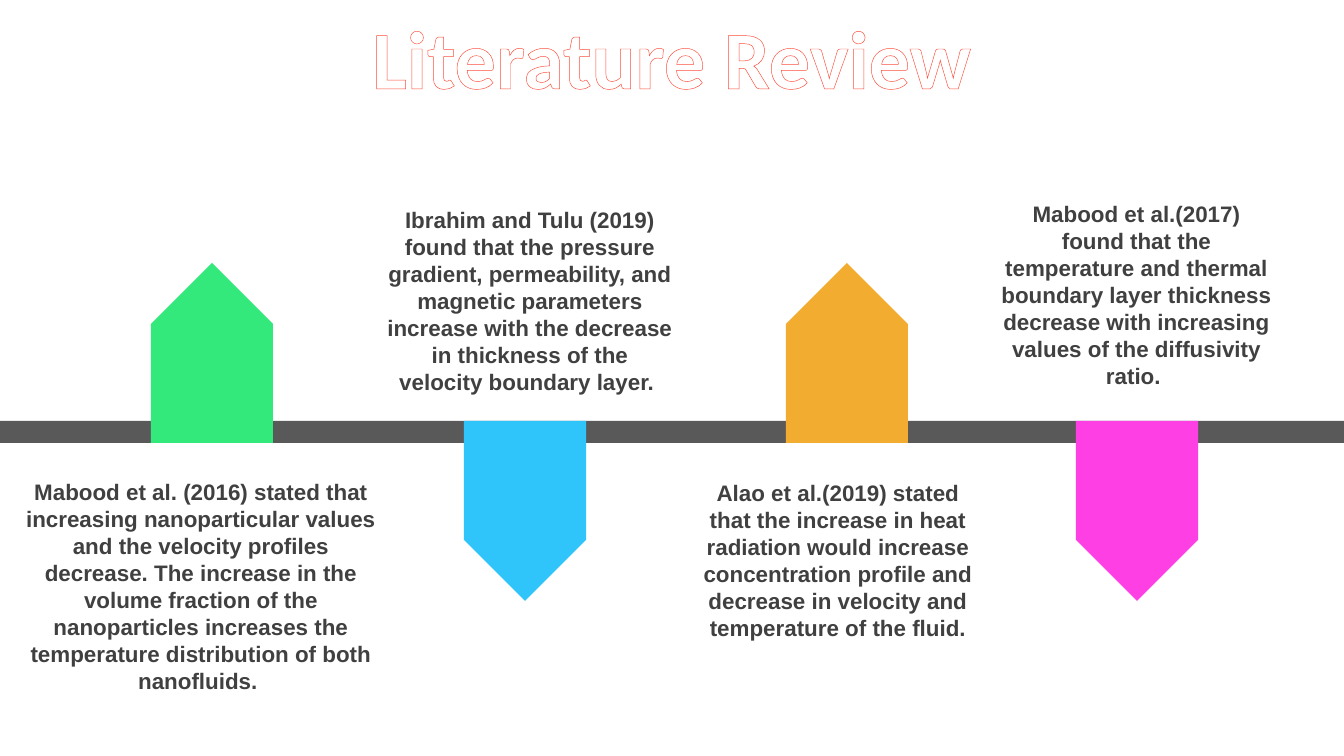
from lxml import etree
from pptx import Presentation
from pptx import util as u
from pptx.dml.color import RGBColor
from pptx.enum import dml, shapes, text
from pptx.oxml.ns import qn

SLIDE_W, SLIDE_H = 1344, 756
BAR_TOP, BAR_H = 421, 22
MARKER_W, MARKER_H = 122, 180
TITLE_LINE = "FE4D3B"

# marker left, points up, colour, text box (left, top, width, height), text
STUDIES = [
    (151, True, "33E97C", (8, 472, 386, 231),
     "Mabood et al. (2016) stated that increasing nanoparticular values and "
     "the velocity profiles decrease. The increase in the volume fraction of "
     "the nanoparticles increases the temperature distribution of both "
     "nanofluids. "),
    (464, False, "2FC5FA", (374, 200, 312, 203),
     "Ibrahim and Tulu (2019) found that the pressure gradient, permeability, "
     "and magnetic parameters increase with the decrease in thickness of the "
     "velocity boundary layer. "),
    (786, True, "F2AC30", (689, 473, 298, 176),
     "Alao et al.(2019) stated that the increase in heat radiation would "
     "increase concentration profile and decrease in velocity and "
     "temperature of the fluid."),
    (1076, False, "FE3FE4", (988, 194, 297, 203),
     "Mabood et al.(2017) found that the temperature and thermal boundary "
     "layer thickness decrease with increasing values of the diffusivity "
     "ratio. "),
]


def px(n):
    return u.Emu(round(n * u.Inches(10) / SLIDE_W))


def rgb(value):
    return RGBColor.from_string(value)


def add_block(s, kind, box, color):
    sp = s.shapes.add_shape(kind, *map(px, box))
    sp.shadow.inherit = False
    sp.fill.solid()
    sp.fill.fore_color.rgb = rgb(color)
    sp.line.fill.background()
    return sp


def add_title(s, box, words):
    """Pattern-filled letters with a coloured outline."""
    title = s.shapes.title
    title.left, title.top, title.width, title.height = map(px, box)
    tf = title.text_frame
    tf.vertical_anchor = text.MSO_ANCHOR.MIDDLE
    p = tf.paragraphs[0]
    p.alignment = text.PP_ALIGN.CENTER
    r = p.add_run()
    r.text = words
    f = r.font
    f.name, f.size, f.bold = "Calibri", u.Pt(44), True
    f.fill.patterned()
    f.fill.pattern = dml.MSO_PATTERN.LIGHT_DOWNWARD_DIAGONAL
    f.fill.fore_color.rgb = rgb("FE9489")
    f.fill.back_color.rgb = rgb("FFFFFF")
    ln = etree.Element(qn("a:ln"), w=str(u.Pt(1)))
    fill = etree.SubElement(ln, qn("a:solidFill"))
    etree.SubElement(fill, qn("a:srgbClr"), val=TITLE_LINE)
    r._r.get_or_add_rPr().insert(0, ln)


def add_marker(s, left, up, color):
    """Pentagon standing on the bar's bottom edge or hanging from its top."""
    top = BAR_TOP + BAR_H - MARKER_H if up else BAR_TOP
    # The preset points right, so its frame is laid flat around the same centre.
    shift = (MARKER_H - MARKER_W) / 2
    box = (left - shift, top + shift, MARKER_H, MARKER_W)
    sp = add_block(s, shapes.MSO_SHAPE.PENTAGON, box, color)
    sp.rotation = 270 if up else 90


def add_finding(s, box, words):
    tf = s.shapes.add_textbox(*map(px, box)).text_frame
    tf.word_wrap = True
    tf.auto_size = text.MSO_AUTO_SIZE.SHAPE_TO_FIT_TEXT
    p = tf.paragraphs[0]
    p.text = words
    p.alignment = text.PP_ALIGN.CENTER
    f = p.font
    f.name, f.size, f.bold = "Arial", u.Pt(12), True
    f.color.rgb = rgb("404040")


def main():
    prs = Presentation()
    prs.slide_width, prs.slide_height = px(SLIDE_W), px(SLIDE_H)
    s = prs.slides.add_slide(prs.slide_layouts[5])
    add_title(s, (0, 8, SLIDE_W, 96), "Literature Review")
    add_block(s, shapes.MSO_SHAPE.RECTANGLE,
              (0, BAR_TOP, SLIDE_W, BAR_H), "595959")
    for left, up, color, box, words in STUDIES:
        add_marker(s, left, up, color)
        add_finding(s, box, words)
    prs.save("out.pptx")


if __name__ == "__main__":
    main()
